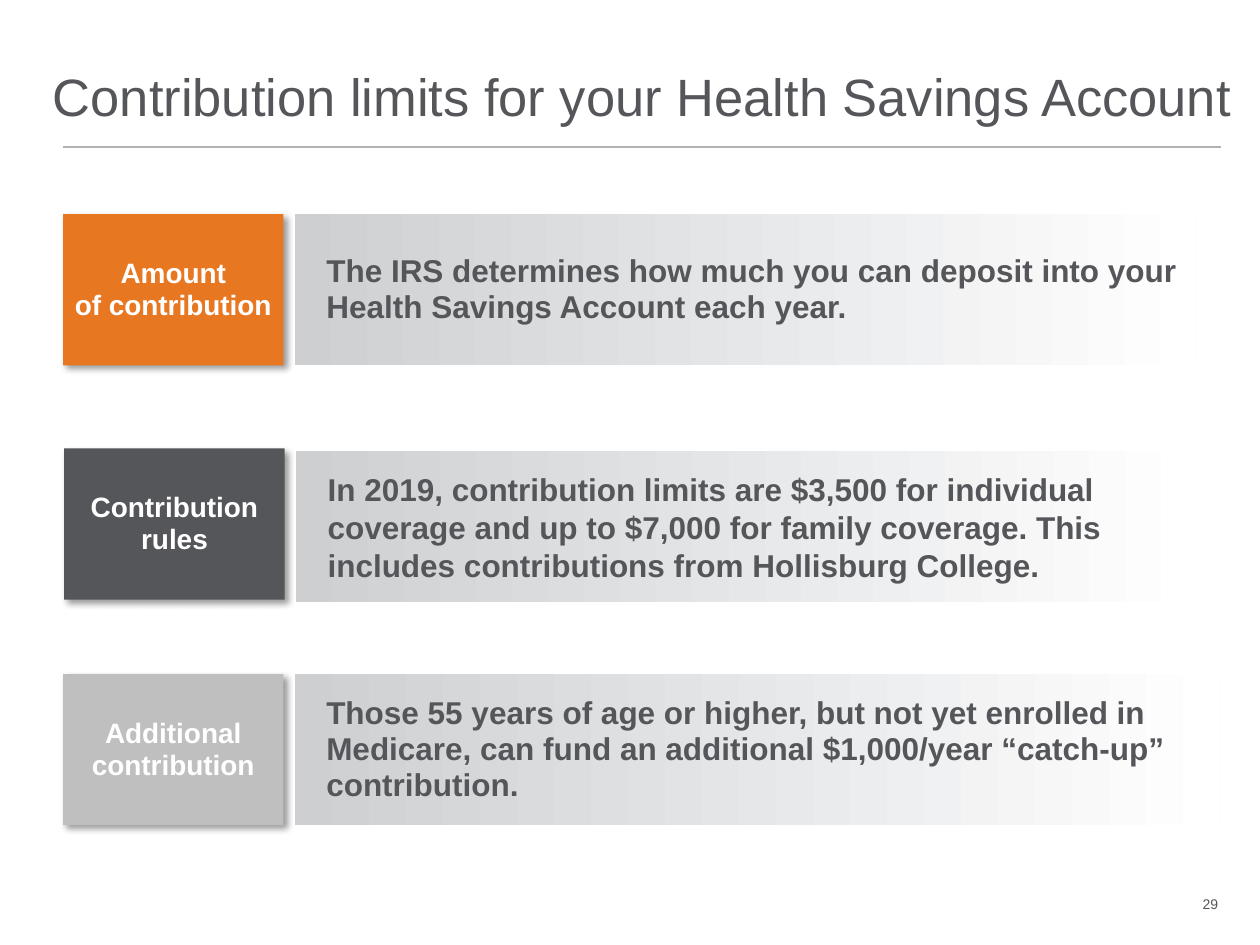
from lxml import etree
from pptx import Presentation
from pptx.dml.color import RGBColor
from pptx.enum.shapes import MSO_CONNECTOR, MSO_SHAPE
from pptx.enum.text import MSO_ANCHOR, MSO_AUTO_SIZE, PP_ALIGN
from pptx.oxml.ns import qn
from pptx.util import Pt

LINE, RECT = MSO_CONNECTOR.STRAIGHT, MSO_SHAPE.RECTANGLE
MIDDLE, BOTTOM = MSO_ANCHOR.MIDDLE, MSO_ANCHOR.BOTTOM
LEFT, CENTER, RIGHT = PP_ALIGN.LEFT, PP_ALIGN.CENTER, PP_ALIGN.RIGHT
NO_FIT = MSO_AUTO_SIZE.NONE

FONT = "Arial"
COLORS = {
    "text": "55565A",
    "rule": "B1B3B3",
    "white": "FFFFFF",
    "fade": "CDCFD1",
    "orange": "E87722",
    "dark": "55565A",
    "light": "BFBFBF",
    "shadow": "000000",
}
TAG_W, ROW_H = 126, 86.4
BAR_GAP = 6.5  # between a tag and its bar

# Tag text, tag colour, left, tag top, bar top, bar width, line spacing, bar text
ROWS = [
    ("Amount\nof contribution", "orange", 36, 122.4, 122.4, 514.8, 0.95,
     "The IRS determines how much you can deposit into your "
     "Health Savings Account each year."),
    ("Contribution\nrules", "dark", 36.7, 256.3, 257.8, 514.8, 1.0,
     "In 2019, contribution limits are $3,500 for individual coverage "
     "and up to $7,000 for family coverage. This includes contributions "
     "from Hollisburg College."),
    ("Additional\ncontribution", "light", 36, 385.2, 385.2, 528.5, 0.95,
     "Those 55 years of age or higher, but not yet enrolled in Medicare, "
     "can fund an additional $1,000/year “catch-up” contribution."),
]


def color(name):
    return RGBColor.from_string(COLORS[name])


def write(shape, text, size, ink="text", bold=False, align=LEFT,
          anchor=MIDDLE, inset=(0, 0, 0, 0), wrap=True, space=1.0):
    frame = shape.text_frame
    frame.auto_size = NO_FIT
    frame.word_wrap = wrap
    frame.vertical_anchor = anchor
    (frame.margin_left, frame.margin_top,
     frame.margin_right, frame.margin_bottom) = map(Pt, inset)
    para = frame.paragraphs[0]
    para.text = text
    para.alignment = align
    para.line_spacing = space
    font = para.font
    font.name, font.size, font.bold = FONT, Pt(size), bold
    font.color.rgb = color(ink)


def add_rect(slide, left, top, width):
    box = slide.shapes.add_shape(RECT, Pt(left), Pt(top), Pt(width), Pt(ROW_H))
    box.shadow.inherit = False
    box.line.fill.background()
    return box


def add_glow(shape):
    """Soft drop shadow to the lower right."""
    effects = shape._element.spPr.find(qn("a:effectLst"))
    outer = etree.SubElement(
        effects, qn("a:outerShdw"), blurRad=str(Pt(4)), dist=str(Pt(3)),
        dir=str(45 * 60000), algn="tl", rotWithShape="0")
    tint = etree.SubElement(outer, qn("a:srgbClr"), val=COLORS["shadow"])
    etree.SubElement(tint, qn("a:alpha"), val="40000")


def add_tag(slide, text, fill, left, top):
    tag = add_rect(slide, left, top, TAG_W)
    tag.fill.solid()
    tag.fill.fore_color.rgb = color(fill)
    add_glow(tag)
    write(tag, text, 16, "white", True, CENTER, space=0.95)


def add_bar(slide, text, left, top, width, space):
    bar = add_rect(slide, left, top, width)
    bar.fill.gradient()
    bar.fill.gradient_angle = 0
    for stop, name, place in zip(bar.fill.gradient_stops,
                                 ("fade", "white"), (0, 1)):
        stop.color.rgb = color(name)
        stop.position = place
    write(bar, text, 18, bold=True, inset=(18, 7.2, 0, 7.2), space=space)


def add_title(slide, text):
    title = slide.shapes.title
    title.left, title.top = Pt(30.2), Pt(23.8)
    title.width, title.height = Pt(689.8), Pt(49)
    write(title, text, 30, anchor=BOTTOM)


def add_rule(slide):
    rule = slide.shapes.add_connector(LINE, Pt(36), Pt(84.2), Pt(697.7), Pt(84.2))
    rule.line.color.rgb = color("rule")
    rule.line.width = Pt(1)
    etree.SubElement(rule._element.spPr, qn("a:effectLst"))


def add_number(slide, text):
    box = slide.shapes.add_textbox(Pt(666), Pt(506.9), Pt(30.2), Pt(19.4))
    write(box, text, 8, align=RIGHT, wrap=False)


def main():
    deck = Presentation()
    deck.slide_width, deck.slide_height = Pt(720), Pt(540)
    slide = deck.slides.add_slide(deck.slide_layouts[5])  # Title Only

    # Heading
    add_title(slide, "Contribution limits for your Health Savings Account")
    add_rule(slide)

    # Rows of tag and fading bar
    for label, fill, left, top, bar_top, width, space, text in ROWS:
        add_bar(slide, text, left + TAG_W + BAR_GAP, bar_top, width, space)
        add_tag(slide, label, fill, left, top)

    # Page number
    add_number(slide, "29")
    deck.save("out.pptx")


if __name__ == "__main__":
    main()
